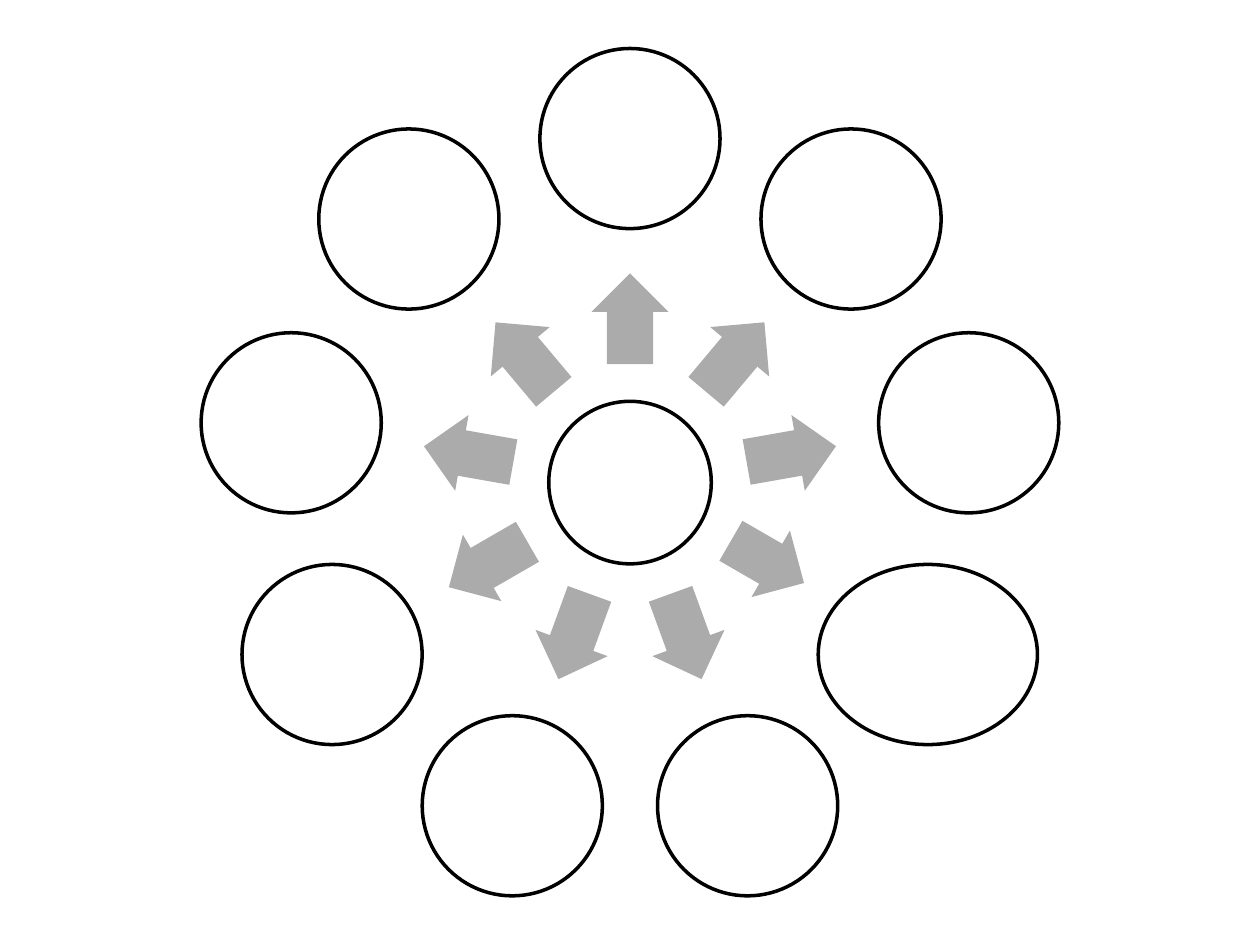
import math

import pptx
import pptx.dml.color
import pptx.enum.shapes
import pptx.util

Inches = pptx.util.Inches
SHAPES = pptx.enum.shapes.MSO_SHAPE
COLOURS = {"disc": "FFFFFF", "outline": "000000", "arrow": "ABABAB"}

CENTRE_X, CENTRE_Y = 5, 3.83
HUB_SIZE, DISC_SIZE = 1.29, 1.43
WIDE_DISC = 1.74
ARROW_LENGTH, SHORT_ARROW, ARROW_WIDTH = 0.72, 0.67, 0.61
DISC_RADIUS, ARROW_RADIUS, SHORT_ARROW_RADIUS = 2.73, 1.3, 1.26
SPOKES = 9
WIDE_SPOKE = 3


class RadialDiagram:
    """Places shapes by angle and distance around the hub."""

    def __init__(self, slide):
        self.group = slide.shapes.add_group_shape()

    def colour(self, name):
        return pptx.dml.color.RGBColor.from_string(COLOURS[name])

    def place(self, kind, angle, radius, width, height, fill):
        x = CENTRE_X + radius * math.cos(math.radians(angle))
        y = CENTRE_Y + radius * math.sin(math.radians(angle))
        shape = self.group.shapes.add_shape(
            kind, Inches(x - width / 2), Inches(y - height / 2),
            Inches(width), Inches(height))
        shape.shadow.inherit = False
        shape.fill.solid()
        shape.fill.fore_color.rgb = self.colour(fill)
        return shape

    def disc(self, angle, radius, width, height):
        disc = self.place(SHAPES.OVAL, angle, radius, width, height, "disc")
        disc.line.color.rgb = self.colour("outline")
        disc.line.width = pptx.util.Pt(2)

    def arrow(self, angle, radius, length):
        arrow = self.place(SHAPES.RIGHT_ARROW, angle, radius, length,
                           ARROW_WIDTH, "arrow")
        arrow.line.fill.background()
        arrow.adjustments[0] = 0.6
        arrow.adjustments[1] = 0.5
        arrow.rotation = angle


def main():
    presentation = pptx.Presentation()
    presentation.slide_width = Inches(10)
    presentation.slide_height = Inches(7.5)
    blank_layout = presentation.slide_layouts[6]
    diagram = RadialDiagram(presentation.slides.add_slide(blank_layout))

    diagram.disc(0, 0, HUB_SIZE, HUB_SIZE)
    for spoke in range(SPOKES):
        angle = (270 + spoke * 360 / SPOKES) % 360
        if spoke == WIDE_SPOKE:
            diagram.arrow(angle, SHORT_ARROW_RADIUS, SHORT_ARROW)
            diagram.disc(angle, DISC_RADIUS, WIDE_DISC, DISC_SIZE)
        else:
            diagram.arrow(angle, ARROW_RADIUS, ARROW_LENGTH)
            diagram.disc(angle, DISC_RADIUS, DISC_SIZE, DISC_SIZE)

    presentation.save("out.pptx")


if __name__ == "__main__":
    main()
